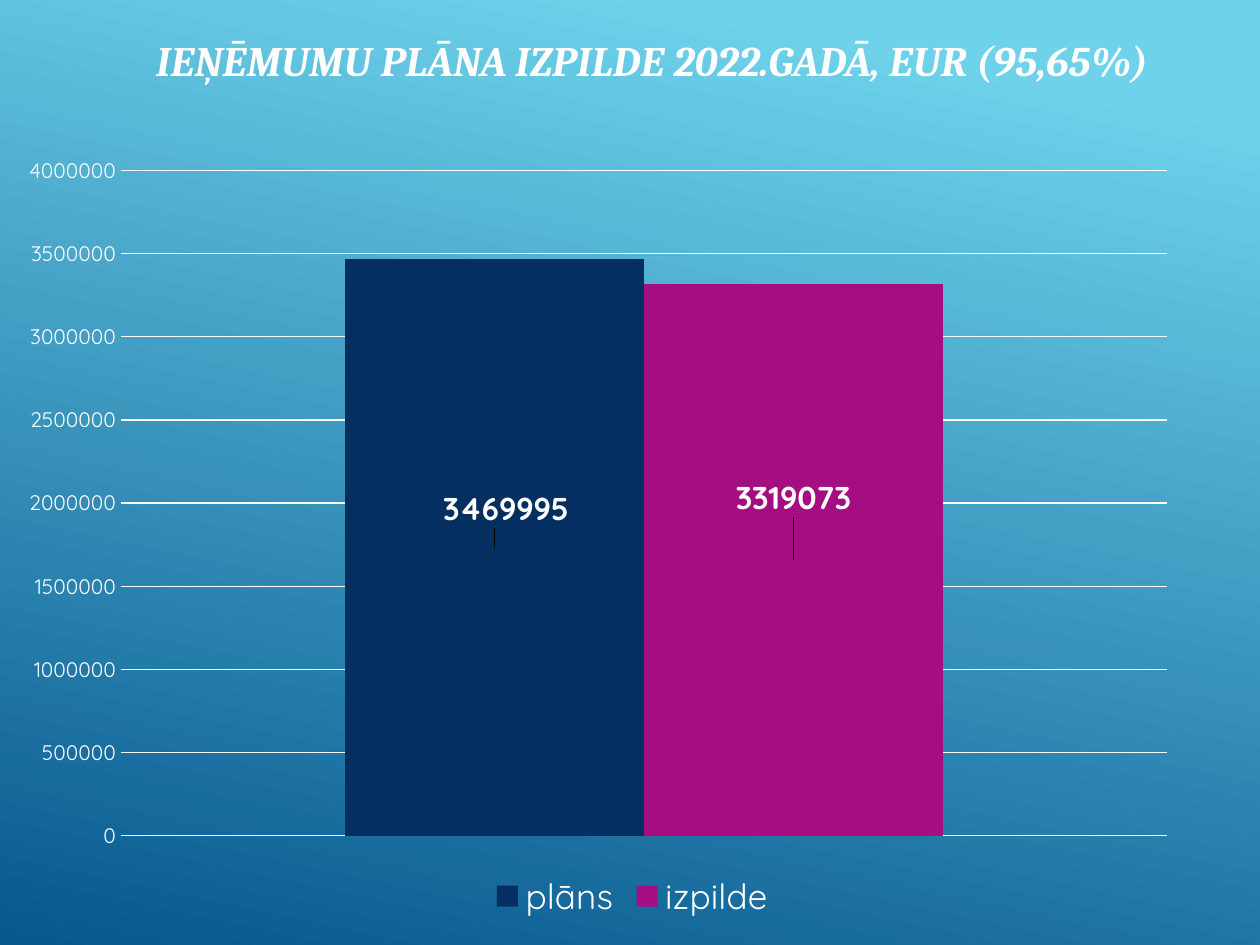
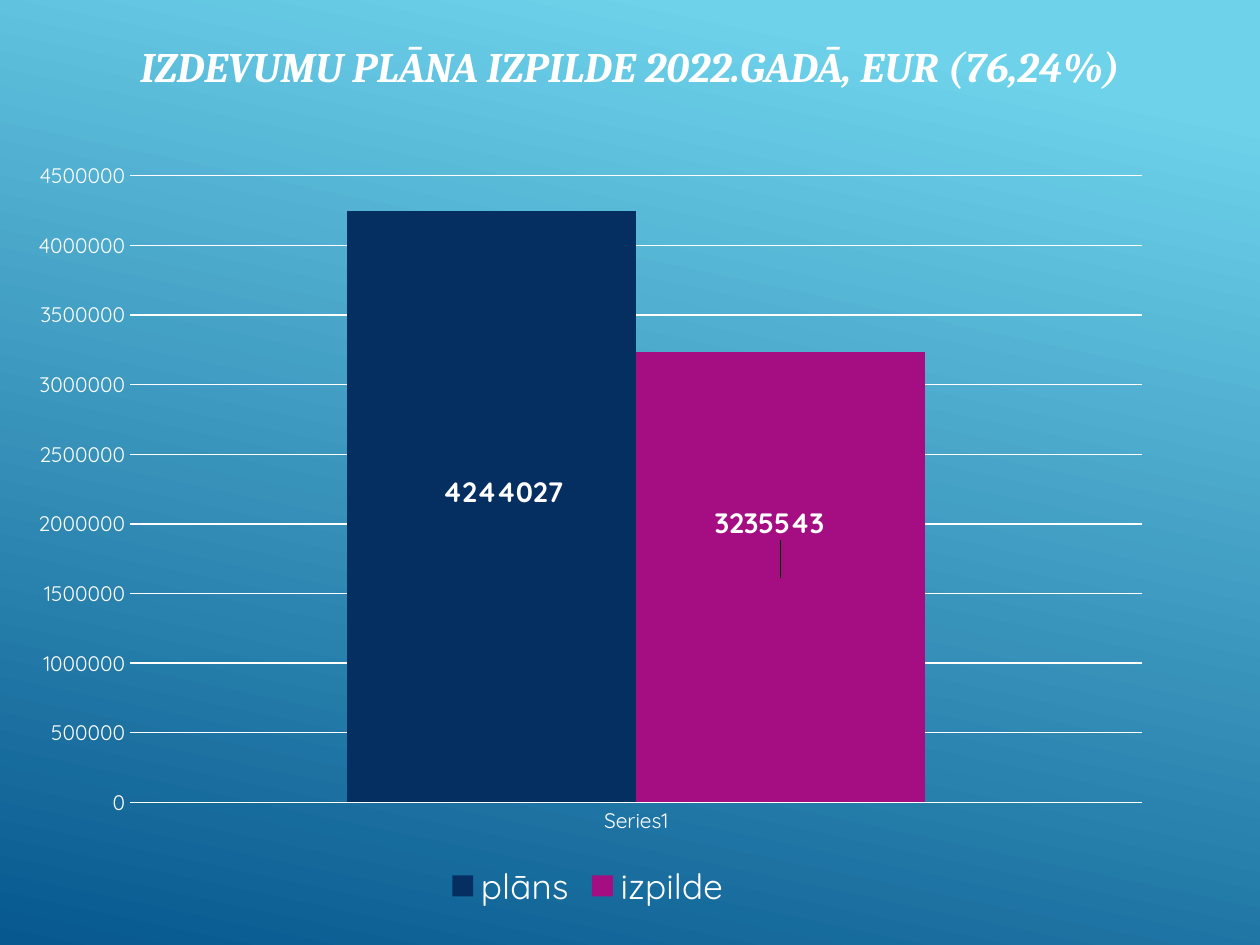
"""Build two slides comparing planned and actual revenue and spending in 2022."""
from pptx import Presentation
from pptx.chart.data import CategoryChartData
from pptx.dml.color import RGBColor
from pptx.enum.chart import XL_CHART_TYPE as ChartType
from pptx.enum.chart import XL_LABEL_POSITION as LabelPosition
from pptx.enum.chart import XL_LEGEND_POSITION as LegendPosition
from pptx.enum.chart import XL_TICK_MARK as TickMark
from pptx.enum.text import MSO_ANCHOR, PP_ALIGN
from pptx.oxml.ns import qn
from pptx.oxml.xmlchemy import OxmlElement
from pptx.util import Inches, Pt

WHITE = RGBColor(0xFF, 0xFF, 0xFF)
SKY = RGBColor(0x6E, 0xD2, 0xEB)
OCEAN = RGBColor(0x06, 0x58, 0x8E)
NAVY = RGBColor(0x05, 0x2F, 0x61)
MAGENTA = RGBColor(0xA5, 0x0E, 0x82)
TITLE_FONT, CHART_FONT = "Cambria", "Quicksand"
SERIES_COLORS = {"plāns": NAVY, "izpilde": MAGENTA}
STEP = 500000

SLIDES = [
    dict(title="IEŅĒMUMU PLĀNA IZPILDE 2022.GADĀ, EUR (95,65%)",
         title_box=(0.59, 0, 9.17, 0.94), chart_box=(0.12, 1.23, 9.33, 6.14),
         category="1", show_category=False, top=8 * STEP, label_size=18,
         values=(3469995, 3319073), shifts=((0.01, -0.05), (0, -0.08)),
         plot=(0.09, 0.02, 0.89, 0.86), legend=(0.4, 0.92)),
    dict(title="IZDEVUMU PLĀNA IZPILDE 2022.GADĀ, EUR (76,24%)",
         title_box=(0, -0.11, 10, 1.26), chart_box=(0.12, 1.15, 9.13, 6.14),
         category="Series1", show_category=True, top=9 * STEP, label_size=16,
         values=(4244027, 3235543), shifts=((0.01, -0.02), (-0.01, -0.07)),
         plot=(0.1, 0.04, 0.88, 0.81), legend=(0.37, 0.92)),
]


def style_font(font, size, name=CHART_FONT, bold=False, italic=False):
    font.name, font.size, font.bold, font.italic = name, Pt(size), bold, italic
    font.color.rgb = WHITE


def set_layout(parent, index, numbers, target=None, mode="edge"):
    for old in parent.findall(qn("c:layout")):
        parent.remove(old)
    layout = OxmlElement("c:layout")
    manual = OxmlElement("c:manualLayout")
    layout.append(manual)
    entries = [("layoutTarget", target)] if target else []
    if mode == "edge":
        entries += [("xMode", mode), ("yMode", mode)]
    entries += zip("xywh", numbers)
    for tag, value in entries:
        entry = OxmlElement(f"c:{tag}")
        entry.set("val", str(value))
        manual.append(entry)
    parent.insert(index, layout)


deck = Presentation()
deck.slide_width, deck.slide_height = Inches(10), Inches(7.5)
title_only = deck.slide_layouts[5]

for content in SLIDES:
    page = deck.slides.add_slide(title_only)
    fill = page.background.fill
    fill.gradient()
    fill.gradient_angle = 258
    for stop, color, position in zip(fill.gradient_stops, (SKY, OCEAN), (0.1, 1)):
        stop.color.rgb, stop.position = color, position

    title = page.shapes.title
    title.left, title.top, title.width, title.height = map(Inches, content["title_box"])
    title.text_frame.vertical_anchor = MSO_ANCHOR.MIDDLE
    para = title.text_frame.paragraphs[0]
    para.alignment = PP_ALIGN.CENTER
    span = para.add_run()
    span.text = content["title"]
    style_font(span.font, 24, TITLE_FONT, bold=True, italic=True)

    data = CategoryChartData()
    data.categories = [content["category"]]
    for name, value in zip(SERIES_COLORS, content["values"]):
        data.add_series(name, [value])
    chart = page.shapes.add_chart(
        ChartType.COLUMN_CLUSTERED, *map(Inches, content["chart_box"]), data).chart
    chart.has_title = False
    style_font(chart.font, 10)

    plot = chart.plots[0]
    plot.gap_width, plot.overlap, plot.vary_by_categories = 150, 0, False
    for series, color, shift in zip(plot.series, SERIES_COLORS.values(), content["shifts"]):
        series.format.fill.solid()
        series.format.fill.fore_color.rgb = color
        series.data_labels.show_value = True
        point_label = series.points[0].data_label
        for label in (series.data_labels, point_label):
            label.position = LabelPosition.CENTER
            style_font(label.font, content["label_size"], bold=True)
        set_layout(series._element.xpath(".//c:dLbl")[0], 1, shift, mode="factor")

    for axis in (chart.category_axis, chart.value_axis):
        axis.major_tick_mark = axis.minor_tick_mark = TickMark.NONE
        axis.format.line.fill.background()
        style_font(axis.tick_labels.font, 12)
    chart.category_axis.visible = content["show_category"]
    scale = chart.value_axis
    scale.minimum_scale, scale.maximum_scale, scale.major_unit = 0, content["top"], STEP
    scale.has_major_gridlines = True
    scale.major_gridlines.format.line.color.rgb = WHITE
    scale.major_gridlines.format.line.width = Pt(0.75)

    chart.has_legend = True
    chart.legend.position = LegendPosition.BOTTOM
    chart.legend.include_in_layout = False
    style_font(chart.legend.font, 20)
    set_layout(chart.legend._element, 1, content["legend"])
    set_layout(chart._chartSpace.chart.plotArea, 0, content["plot"], target="inner")

deck.save("out.pptx")
